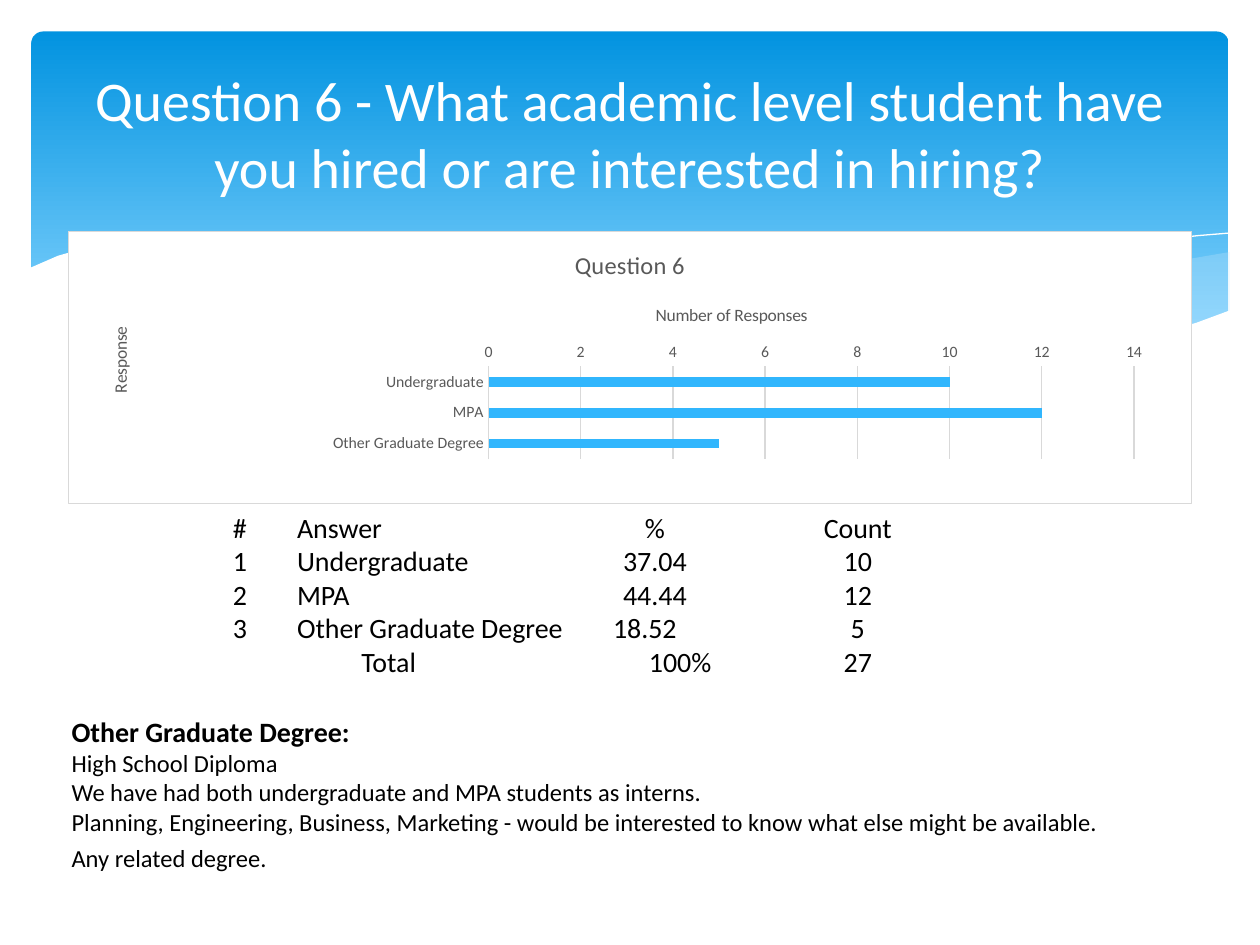
from pptx import Presentation
from pptx.chart.data import CategoryChartData
from pptx.dml.color import RGBColor
from pptx.enum.chart import XL_CHART_TYPE as ChartType, XL_TICK_MARK as Tick
from pptx.enum.shapes import MSO_SHAPE as Shape
from pptx.enum.text import MSO_ANCHOR as Anchor, PP_ALIGN as Align
from pptx.oxml import parse_xml
from pptx.oxml.ns import nsdecls, qn
from pptx.util import Inches, Pt

FONT = "Calibri"
WIDTH, HEIGHT = 10, 7.5
TITLE = "Question 6 - What academic level student have you hired or are interested in hiring?"
RESPONSES = {"Undergraduate": 10, "MPA": 12, "Other Graduate Degree": 5}
ANSWER_STOP, PERCENT_STOP, COUNT_STOP = 0.51, 3.35, 4.96
ANSWERS = [
    ("#\tAnswer\t%\tCount", ANSWER_STOP, PERCENT_STOP),
    ("1\tUndergraduate\t37.04\t10", ANSWER_STOP, PERCENT_STOP),
    ("2\tMPA\t44.44\t12", ANSWER_STOP, PERCENT_STOP),
    ("3\tOther Graduate Degree\t18.52\t5", ANSWER_STOP, PERCENT_STOP - 0.08),
    ("\tTotal\t100%\t27", ANSWER_STOP * 2, PERCENT_STOP + 0.2),
]
COMMENTS = [
    ("Other Graduate Degree:", {"size": 16, "bold": True}, 0),
    ("High School Diploma", {"size": 14}, 0),
    ("We have had both undergraduate and MPA students as interns.", {"size": 14}, 0),
    ("Planning, Engineering, Business, Marketing - would be interested to know "
     "what else might be available.", {"size": 14}, 0),
    ("Any related degree.", {"size": 14}, 4),
]
WAVES = [
    {"fill": "C6E7FC", "alpha": 29, "points": [
        (9.76, 2), (9.35, 2.07), (8.61, 2.23), (7.79, 2.42), (7.06, 2.57), (6.61, 2.65),
        (7.05, 2.71), (7.57, 2.76), (8.14, 2.78), (8.63, 2.75), (9.05, 2.69),
        (9.42, 2.59), (9.76, 2.47)]},
    {"fill": "C6E7FC", "alpha": 40, "points": [
        (8.93, 2.73), (8.37, 2.65), (7.75, 2.54), (7.06, 2.4), (6.29, 2.22), (5.69, 2.08),
        (5.14, 1.98), (4.65, 1.91), (4.2, 1.87), (3.8, 1.85), (3.44, 1.86), (2.86, 1.91),
        (3.42, 1.99), (4.04, 2.11), (4.91, 2.32), (5.66, 2.48), (6.34, 2.61), (6.95, 2.7),
        (7.48, 2.76), (8.07, 2.78), (8.57, 2.77)]},
    {"line": "FFFFFF", "points": [
        (3.09, 1.95), (3.44, 1.9), (3.87, 1.87), (4.33, 1.87), (4.89, 1.9), (5.56, 1.97),
        (6.36, 2.08), (7.27, 2.26), (8.31, 2.51), (9.07, 2.72)]},
    {"line": "FFFFFF", "points": [
        (6.13, 2.57), (6.72, 2.41), (7.48, 2.23), (8.36, 2.04), (8.81, 1.96),
        (9.24, 1.9), (9.51, 1.87), (9.75, 1.85)]},
    {"fill": "FFFFFF", "points": [
        (9.77, 2.46), (9.5, 2.56), (9.2, 2.65), (8.87, 2.71), (8.5, 2.75), (8.09, 2.77),
        (7.61, 2.75), (7.08, 2.7), (6.48, 2.62), (5.79, 2.5), (5.03, 2.33), (4.47, 2.2),
        (3.91, 2.07), (3.4, 1.97), (2.92, 1.9), (2.5, 1.86), (2.11, 1.84), (1.77, 1.84),
        (1.46, 1.85), (1.19, 1.87), (0.95, 1.91), (0.67, 1.97), (0.46, 2.03), (0.23, 2.13),
        (0.23, 3.29), (9.77, 3.29)]},
]


def color(value):
    return RGBColor.from_string(value)


def style_font(font, **values):
    values = {"name": FONT, "bold": False, "color": "000000", **values}
    font.color.rgb = color(values.pop("color"))
    font.size = Pt(values.pop("size"))
    for name, value in values.items():
        setattr(font, name, value)


def add_banner(slide):
    left, top = 0.25, 0.25
    banner = slide.shapes.add_shape(
        Shape.ROUNDED_RECTANGLE, Inches(left), Inches(top), Inches(WIDTH - 2 * left), Inches(2.7))
    banner.adjustments[0] = 0.034
    banner.shadow.inherit = False
    banner.line.fill.background()
    banner.fill.gradient()
    banner.fill.gradient_angle = 270
    for stop, (place, shade) in zip(banner.fill.gradient_stops, [(0, "0293E0"), (0.9, "83D3FE")]):
        stop.position = place
        stop.color.rgb = color(shade)


def add_wave(slide, points, fill=None, alpha=None, line=None):
    start, *rest = [(Inches(x), Inches(y)) for x, y in points]
    builder = slide.shapes.build_freeform(*start)
    builder.add_line_segments(rest, close=fill is not None)
    wave = builder.convert_to_shape()
    wave.shadow.inherit = False
    if fill:
        wave.fill.solid()
        wave.fill.fore_color.rgb = color(fill)
        wave.line.fill.background()
    else:
        wave.fill.background()
        wave.line.color.rgb = color(line)
        wave.line.width = Pt(0)
    if alpha:
        shade = next(wave._element.spPr.iter(qn("a:srgbClr")))
        shade.append(parse_xml(f'<a:alpha {nsdecls("a")} val="{alpha * 1000}"/>'))


def add_box(slide, left, top, width, height, paragraphs, anchor=Anchor.TOP):
    box = slide.shapes.add_textbox(Inches(left), Inches(top), Inches(width), Inches(height))
    frame = box.text_frame
    frame.word_wrap = True
    frame.vertical_anchor = anchor
    for index, (text, font, space) in enumerate(paragraphs):
        para = frame.paragraphs[0] if index == 0 else frame.add_paragraph()
        para.space_before = Pt(space)
        span = para.add_run()
        span.text = text
        style_font(span.font, **font)
    return frame


def add_answers(slide):
    rows = [(text, {"size": 16}, 0) for text, *_ in ANSWERS]
    frame = add_box(slide, 1.75, 4, 6.5, 1.45, rows)
    for para, (_, answer, percent) in zip(frame.paragraphs, ANSWERS):
        stops = [(answer, "l"), (percent, "ctr"), (COUNT_STOP, "ctr")]
        tabs = "".join(f'<a:tab pos="{Inches(place)}" algn="{side}"/>' for place, side in stops)
        para._p.get_or_add_pPr().append(
            parse_xml(f'<a:tabLst {nsdecls("a")}>{tabs}</a:tabLst>'))


def place_part(part, after=None, target="", **shares):
    for old in part.findall(qn("c:layout")):
        part.remove(old)
    modes = "".join(f'<c:{name}Mode val="edge"/>' for name in ("x", "y"))
    sizes = "".join(f'<c:{name} val="{value}"/>' for name, value in shares.items())
    layout = parse_xml(f'<c:layout {nsdecls("c")}><c:manualLayout>{target}{modes}{sizes}'
                       '</c:manualLayout></c:layout>')
    if after is None:
        part.insert(0, layout)
    else:
        after.addnext(layout)


def title_part(owner, frame, text, size):
    frame.text = text
    style_font(frame.paragraphs[0].runs[0].font, size=size, color="595959")
    return owner._element


def add_response_chart(slide):
    data = CategoryChartData()
    data.categories = list(RESPONSES)
    data.add_series("Series 1", list(RESPONSES.values()))
    chart = slide.shapes.add_chart(ChartType.BAR_CLUSTERED, Inches(0.54), Inches(1.83),
                                   Inches(8.92), Inches(2.17), data).chart
    style_font(chart.font, size=10)
    chart.has_legend = False
    chart.has_title = True
    title_part(chart.chart_title, chart.chart_title.text_frame, "Question 6", 14)
    plot = chart.plots[0]
    plot.gap_width = 219
    plot.vary_by_categories = False
    bars = plot.series[0].format.fill
    bars.solid()
    bars.fore_color.rgb = color("31B6FD")

    categories, values = chart.category_axis, chart.value_axis
    axes = [(categories, "Response", 0.033, 0.34), (values, "Number of Responses", 0.52, 0.256)]
    for axis, text, x, y in axes:
        axis.major_tick_mark = axis.minor_tick_mark = Tick.NONE
        style_font(axis.tick_labels.font, size=9, color="595959")
        part = title_part(axis.axis_title, axis.axis_title.text_frame, text, 10)
        place_part(part, after=part.find(qn("c:tx")), x=x, y=y)
    categories.reverse_order = True
    values.minimum_scale, values.maximum_scale, values.major_unit = 0, 14, 2
    values.format.line.fill.background()
    for rule in (categories.format.line, values.major_gridlines.format.line):
        rule.color.rgb = color("D9D9D9")
        rule.width = Pt(0.75)

    body = chart._chartSpace.find(qn("c:chart"))
    place_part(body.find(qn("c:plotArea")), target='<c:layoutTarget val="inner"/>',
               x=0.374, y=0.497, w=0.575, h=0.341)
    body.addnext(parse_xml(
        f'<c:spPr {nsdecls("c", "a")}><a:solidFill><a:srgbClr val="FFFFFF"/></a:solidFill>'
        f'<a:ln w="{Pt(0.75)}"><a:solidFill><a:srgbClr val="D9D9D9"/></a:solidFill></a:ln></c:spPr>'))


def main():
    """Build the survey question slide and save it."""
    deck = Presentation()
    deck.slide_width, deck.slide_height = Inches(WIDTH), Inches(HEIGHT)
    page = deck.slides.add_slide(deck.slide_layouts[6])
    add_banner(page)
    for wave in WAVES:
        add_wave(page, **wave)
    add_response_chart(page)
    heading = add_box(page, 0.5, 0.37, 9, 1.37,
                      [(TITLE, {"size": 32, "color": "FFFFFF"}, 0)], Anchor.MIDDLE)
    heading.paragraphs[0].alignment = Align.CENTER
    add_answers(page)
    add_box(page, 0.47, 5.62, 8.83, 1.38, COMMENTS)
    deck.save("out.pptx")


if __name__ == "__main__":
    main()
